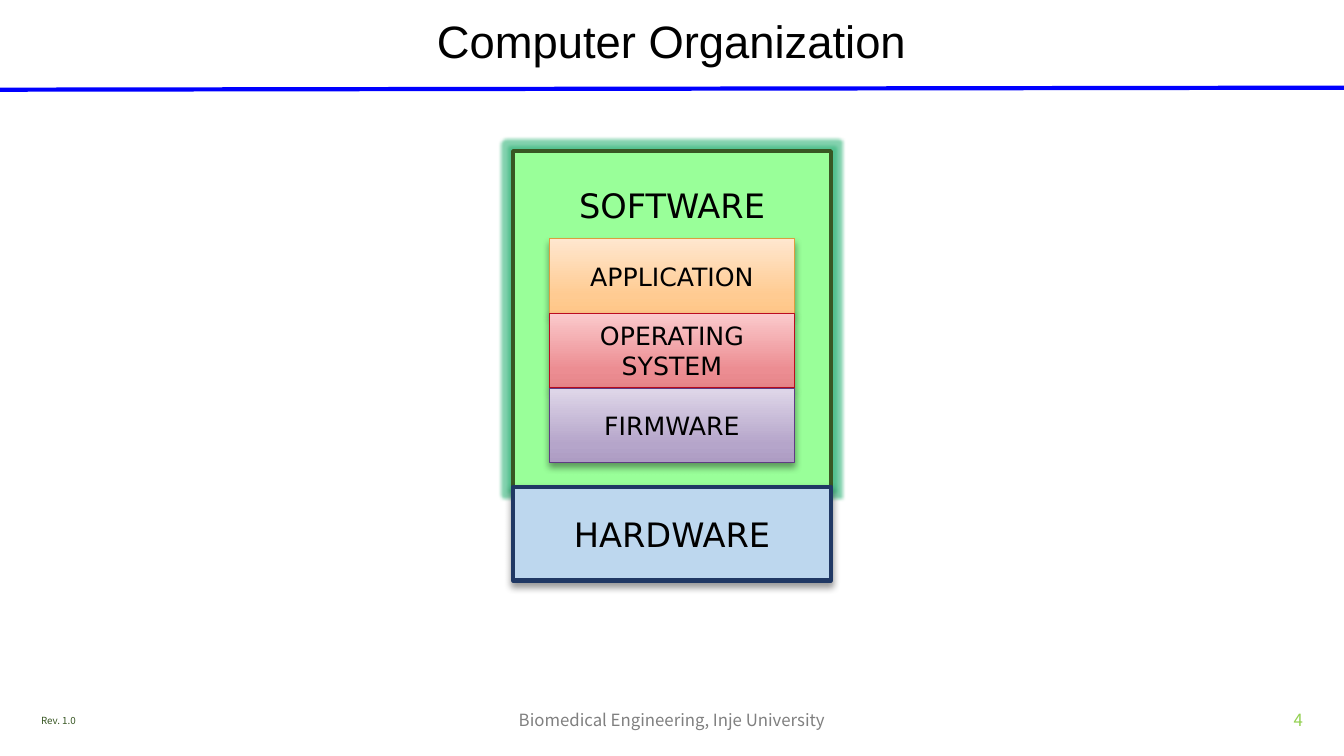
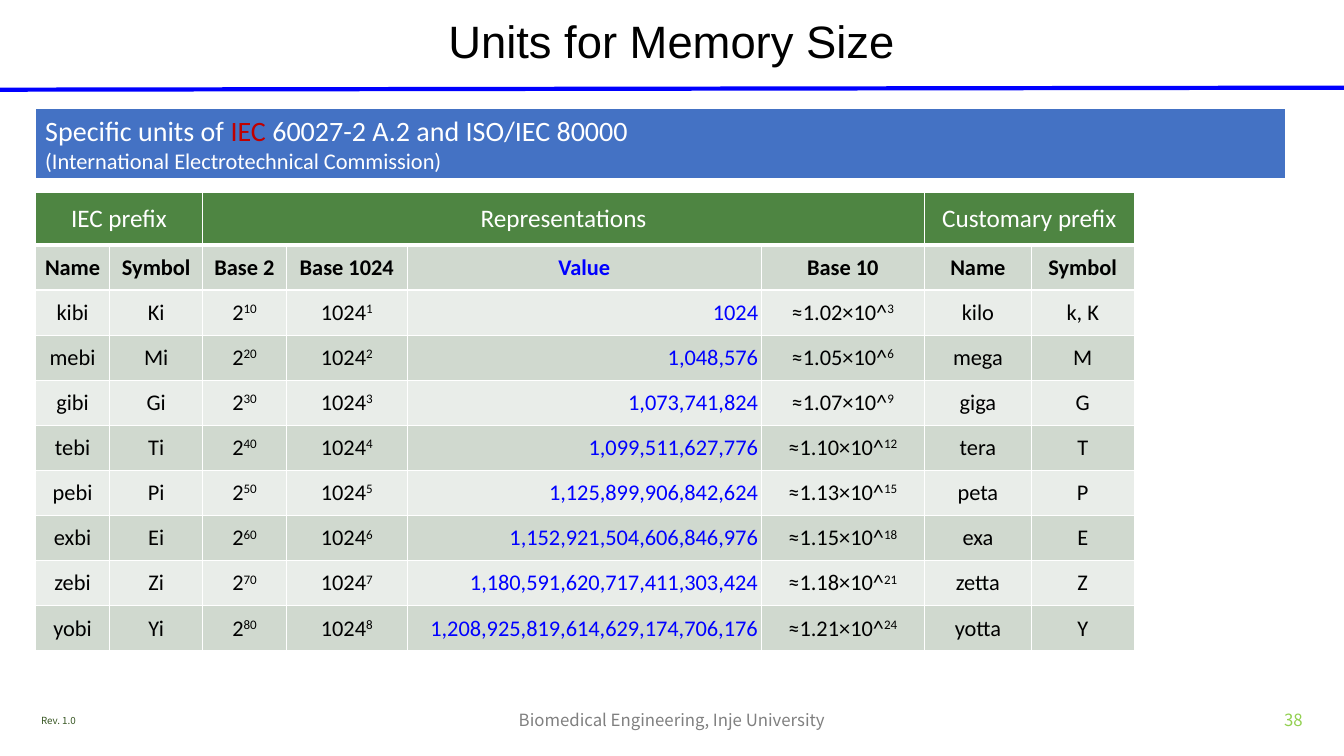
import copy

import lxml.etree
import pptx
import pptx.dml.color
import pptx.enum.shapes
import pptx.enum.text
import pptx.oxml.ns
import pptx.util

Inches = pptx.util.Inches
qn = pptx.oxml.ns.qn
ALIGN = pptx.enum.text.PP_ALIGN
ANCHOR = pptx.enum.text.MSO_ANCHOR
RECTANGLE = pptx.enum.shapes.MSO_SHAPE.RECTANGLE

COLORS = {
    "black": "000000", "white": "FFFFFF", "blue": "0000FF", "red": "C00000",
    "revision": "385723", "footer": "808080", "page": "92D050",
    "software": "99FF99", "software_line": "385723", "software_glow": "33B57A",
    "hardware": "BDD7EE", "hardware_line": "203864",
    "banner": "4472C4", "header": "4E8542", "band_dark": "D0D9CF", "band_light": "E9EDE9",
}
TITLE_FONT, FOOTER_FONT = "Arial", "Noto Sans CJK KR"
DIAGRAM_FONT, TABLE_FONT = "DejaVu Sans", "Calibri"

# Label, line colour, gradient colours from bottom to top
LAYERS = [
    ("APPLICATION", "DB9E3F", ("FFC687", "FFCB92", "FFE7CF")),
    ("OPERATING SYSTEM", "BC0B1F", ("E68589", "EC8D92", "FBCACC")),
    ("FIRMWARE", "603C84", ("AD9CC3", "B5A5CA", "DFD7E9")),
]
GRADIENT_STOPS = (0, 0.25, 1)

# Heading and number of columns spanned
HEADINGS = [("IEC prefix", 2), ("Representations", 4), ("Customary prefix", 2)]
SUBHEADINGS = ["Name", "Symbol", "Base 2", "Base 1024", "Value", "Base 10", "Name", "Symbol"]
VALUE_COLUMN = SUBHEADINGS.index("Value")
COLUMN_WIDTHS = [0.74, 0.92, 0.83, 1.2, 3.51, 1.62, 1.06, 1.02]
HEADING_HEIGHT = 0.52
PREFIXES = [
    ("kibi", "Ki", "kilo", "k, K"), ("mebi", "Mi", "mega", "M"),
    ("gibi", "Gi", "giga", "G"), ("tebi", "Ti", "tera", "T"),
    ("pebi", "Pi", "peta", "P"), ("exbi", "Ei", "exa", "E"),
    ("zebi", "Zi", "zetta", "Z"), ("yobi", "Yi", "yotta", "Y"),
]


def rgb(value):
    return pptx.dml.color.RGBColor.from_string(value)


def box(left, top, width, height):
    return [Inches(length) for length in (left, top, width, height)]


def write(frame, text, align=ALIGN.LEFT, spacing=None, **style):
    """Fill a frame from a string, or from paragraphs of (text, style) runs."""
    paragraphs = [[(text, {})]] if isinstance(text, str) else text
    frame.word_wrap = True
    for index, runs in enumerate(paragraphs):
        paragraph = frame.add_paragraph() if index else frame.paragraphs[0]
        paragraph.alignment = align
        paragraph.line_spacing = spacing
        for words, changes in runs:
            look = {"color": COLORS["black"], "bold": False, "raised": False, **style, **changes}
            run = paragraph.add_run()
            run.text = words
            run.font.size = pptx.util.Pt(look["size"])
            run.font.name = look["font"]
            run.font.bold = look["bold"]
            run.font.color.rgb = rgb(look["color"])
            if look["raised"]:
                run.font._element.set("baseline", "30000")


def set_margins(holder, margin):
    holder.margin_left = holder.margin_right = Inches(margin)
    holder.margin_top = holder.margin_bottom = Inches(margin)


def add_effect(shape, kind, color, opacity, **attributes):
    effects = shape.element.spPr.find(qn("a:effectLst"))
    effect = lxml.etree.SubElement(effects, qn(f"a:{kind}"))
    for key, value in attributes.items():
        effect.set(key, str(value))
    tint = lxml.etree.SubElement(effect, qn("a:srgbClr"), val=color)
    lxml.etree.SubElement(tint, qn("a:alpha"), val=str(opacity * 1000))


def add_shadow(shape):
    add_effect(shape, "outerShdw", COLORS["black"], 40, blurRad=pptx.util.Pt(5.2),
               dist=pptx.util.Pt(3), dir=90 * 60000, rotWithShape=0)


def add_block(shapes, place, line, line_width, fill=None, gradient=None, margin=0.04):
    block = shapes.add_shape(RECTANGLE, *box(*place))
    block.shadow.inherit = False
    if gradient:
        block.fill.gradient()
        block.fill.gradient_angle = 90
        stop_list = block.element.spPr.find(".//" + qn("a:gsLst"))
        stop_list.append(copy.deepcopy(stop_list[-1]))
        for stop, position, color in zip(block.fill.gradient_stops, GRADIENT_STOPS, gradient):
            stop.position = position
            stop.color.rgb = rgb(color)
    else:
        block.fill.solid()
        block.fill.fore_color.rgb = rgb(fill)
    block.line.color.rgb = rgb(line)
    block.line.width = pptx.util.Pt(line_width)
    set_margins(block.text_frame, margin)
    block.text_frame.vertical_anchor = ANCHOR.MIDDLE
    return block


# Shared slide parts
def prepare_layout(layout):
    for holder in list(layout.placeholders):
        if holder.placeholder_format.type == pptx.enum.shapes.PP_PLACEHOLDER.TITLE:
            holder.left, holder.top, holder.width, holder.height = box(0.31, 0.16, 12.7, 0.55)
        else:
            holder.element.getparent().remove(holder.element)


def add_layout_rule(layout, slide):
    """Draw the title rule and hand it to the layout, so that all slides show it."""
    rule = slide.shapes.add_connector(pptx.enum.shapes.MSO_CONNECTOR.STRAIGHT,
                                      0, Inches(0.89), Inches(13.33), Inches(0.87))
    rule.line.color.rgb = rgb(COLORS["blue"])
    rule.line.width = pptx.util.Pt(3)
    lxml.etree.SubElement(rule.element.spPr, qn("a:effectLst"))
    layout.shapes.element.append(rule.element)


def add_footer(slide, page, left, top, width, height):
    side, middle = 3.6, 4.5
    parts = [
        ("Rev. 1.0", left, side, ALIGN.LEFT, 7, "revision"),
        ("Biomedical Engineering, Inje University", left + (width - middle) / 2, middle,
         ALIGN.CENTER, 12, "footer"),
        (str(page), left + width - side, side, ALIGN.RIGHT, 12, "page"),
    ]
    for text, x, part_width, align, size, color in parts:
        frame = slide.shapes.add_textbox(*box(x, top, part_width, height)).text_frame
        frame.vertical_anchor = ANCHOR.MIDDLE
        write(frame, text, align=align, size=size, font=FOOTER_FONT, color=COLORS[color])


def start_slide(deck, layout, title, page):
    slide = deck.slides.add_slide(layout)
    frame = slide.shapes.title.text_frame
    frame.auto_size = pptx.enum.text.MSO_AUTO_SIZE.NONE
    frame.vertical_anchor = ANCHOR.MIDDLE
    write(frame, title, align=ALIGN.CENTER, spacing=0.9, size=32.4, font=TITLE_FONT)
    add_footer(slide, page, 0.31, 6.95, 12.71, 0.39)
    return slide


# Computer organization
def add_system_stack(slide, left, top, width, height):
    hardware_height = 0.93
    software_height = height - hardware_height
    label = {"align": ALIGN.CENTER, "font": DIAGRAM_FONT}

    software = add_block(slide.shapes, (left, top, width, software_height),
                         COLORS["software_line"], 3, fill=COLORS["software"])
    software.text_frame.vertical_anchor = ANCHOR.TOP
    software.text_frame.margin_top = Inches(0.33)
    write(software.text_frame, "SOFTWARE", size=24, **label)
    add_effect(software, "glow", COLORS["software_glow"], 60, rad=pptx.util.Pt(5))

    # Software layers
    layers = slide.shapes.add_group_shape()
    layer_height, inset = 0.74, 0.36
    for index, (name, line, gradient) in enumerate(LAYERS):
        place = (left + inset, top + 0.87 + index * layer_height, width - 2 * inset, layer_height)
        layer = add_block(layers.shapes, place, line, 0.75, gradient=gradient)
        write(layer.text_frame, name, size=18, **label)
        add_shadow(layer)

    hardware = add_block(slide.shapes, (left, top + software_height, width, hardware_height),
                         COLORS["hardware_line"], 3, fill=COLORS["hardware"])
    write(hardware.text_frame, "HARDWARE", size=24, **label)
    add_shadow(hardware)


# Units for memory size
def add_banner(slide, left, top, width, height):
    banner = add_block(slide.shapes, (left, top, width, height), COLORS["white"], 1.5,
                       fill=COLORS["banner"])
    frame = banner.text_frame
    frame.margin_left = frame.margin_right = Inches(0.1)
    write(frame, [
        [("Specific units of ", {}), ("IEC", {"color": COLORS["red"]}),
         (" 60027-2 A.2 and ISO/IEC 80000", {})],
        [("(International Electrotechnical Commission)", {"size": 16})],
    ], size=20, font=TABLE_FONT, color=COLORS["white"])


def style_cell(cell, fill, margin, top_line=1, bottom_line=1):
    properties = cell._tc.get_or_add_tcPr()
    for side, points in (("L", 1), ("R", 1), ("T", top_line), ("B", bottom_line)):
        border = lxml.etree.SubElement(properties, qn(f"a:ln{side}"), w=str(pptx.util.Pt(points)))
        paint = lxml.etree.SubElement(border, qn("a:solidFill"))
        lxml.etree.SubElement(paint, qn("a:srgbClr"), val=COLORS["white"])
    cell.fill.solid()
    cell.fill.fore_color.rgb = rgb(COLORS[fill])
    cell.vertical_anchor = ANCHOR.MIDDLE
    set_margins(cell, margin)


def prefix_row(power):
    """Return the cells for one power of 1024, each a list of (text, style) runs."""
    name, symbol, customary_name, customary_symbol = PREFIXES[power - 1]
    value = 1024 ** power
    raised = {"raised": True}
    return [
        [(name, {})],
        [(symbol, {})],
        [("2", {}), (str(10 * power), raised)],
        [("1024", {}), (str(power), raised)],
        [(f"{value:,}" if power > 1 else str(value), {})],
        [(f"≈{value / 1000 ** power:.2f}×10^", {}), (str(3 * power), raised)],
        [(customary_name, {})],
        [(customary_symbol, {})],
    ]


def add_prefix_table(slide, left, top, width, height):
    row_count = len(PREFIXES) + 2
    table = slide.shapes.add_table(row_count, len(COLUMN_WIDTHS),
                                   *box(left, top, width, height)).table
    scale = width / sum(COLUMN_WIDTHS)
    for column, column_width in zip(table.columns, COLUMN_WIDTHS):
        column.width = Inches(column_width * scale)
    for index, row in enumerate(table.rows):
        row.height = Inches((height - HEADING_HEIGHT) / (row_count - 1) if index
                            else HEADING_HEIGHT)

    # Spanning headings
    for cell in table.rows[0].cells:
        style_cell(cell, "header", 0.05, bottom_line=3)
    start = 0
    for heading, span in HEADINGS:
        cell = table.cell(0, start)
        cell.merge(table.cell(0, start + span - 1))
        write(cell.text_frame, heading, align=ALIGN.CENTER, size=18, font=TABLE_FONT,
              color=COLORS["white"])
        start += span

    # Subheadings and prefixes
    rows = [[[(name, {"bold": True})] for name in SUBHEADINGS]]
    rows += [prefix_row(power) for power in range(1, len(PREFIXES) + 1)]
    for row, contents in enumerate(rows, start=1):
        for column, runs in enumerate(contents):
            cell = table.cell(row, column)
            style_cell(cell, "band_dark" if row % 2 else "band_light", 0.03,
                       top_line=3 if row == 1 else 1)
            is_value = column == VALUE_COLUMN
            write(cell.text_frame, [runs], size=16, font=TABLE_FONT,
                  align=ALIGN.RIGHT if is_value and row > 1 else ALIGN.CENTER,
                  color=COLORS["blue" if is_value else "black"])


def main():
    deck = pptx.Presentation()
    deck.slide_width, deck.slide_height = Inches(13.33), Inches(7.5)
    layout = deck.slide_layouts[5]
    prepare_layout(layout)

    organization = start_slide(deck, layout, "Computer Organization", 4)
    add_layout_rule(layout, organization)
    add_system_stack(organization, 5.09, 1.5, 3.15, 4.26)

    units = start_slide(deck, layout, "Units for Memory Size", 38)
    add_banner(units, 0.35, 1.07, 12.41, 0.71)
    add_prefix_table(units, 0.35, 1.91, 10.9, 4.55)

    deck.save("out.pptx")


if __name__ == "__main__":
    main()
